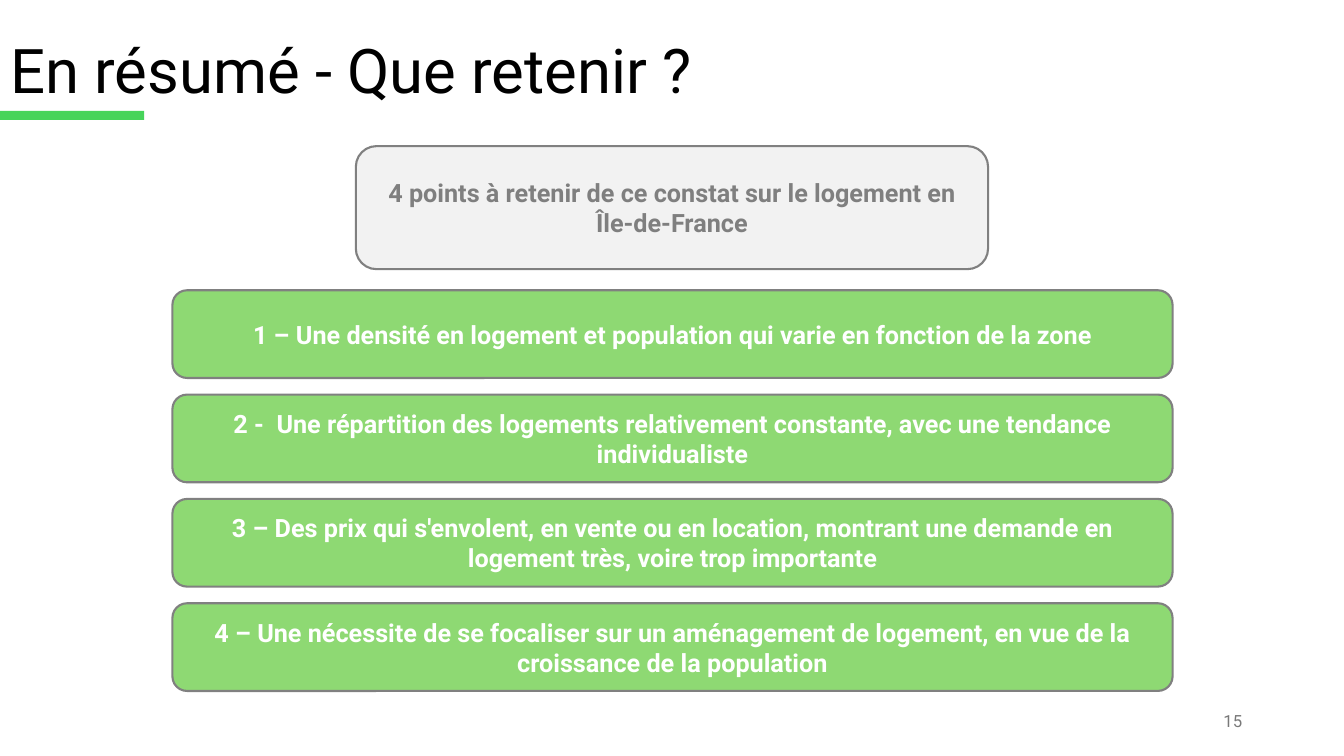
"""Build the summary slide on housing in Île-de-France."""
from dataclasses import dataclass

from pptx import Presentation
from pptx import util as u
from pptx.dml.color import RGBColor
from pptx.enum import shapes, text
from pptx.shapes.autoshape import Shape
from pptx.slide import Slide


@dataclass(frozen=True)
class Theme:
    """Hold the font, type sizes in points and colours."""
    font: str = "Roboto"
    title_size: int = 44
    body_size: int = 18
    number_size: int = 12
    title: str = "000000"
    accent: str = "47D45A"
    point_fill: str = "8ED973"
    point_text: str = "FFFFFF"
    intro_fill: str = "F2F2F2"
    intro_text: str = "7F7F7F"
    outline: str = "808080"
    number: str = "797979"


@dataclass(frozen=True)
class Card:
    """Describe a rounded box, in inches, and its text."""
    left: float
    top: float
    width: float
    height: float
    words: str
    fill: str
    color: str


THEME = Theme()
POINTS = (
    "1 – Une densité en logement et population qui varie en fonction de la zone",
    "2 -  Une répartition des logements relativement constante, avec une tendance individualiste",
    "3 – Des prix qui s'envolent, en vente ou en location, montrant une demande en logement très, "
    "voire trop importante",
    "4 – Une nécessite de se focaliser sur un aménagement de logement, en vue de la croissance "
    "de la population",
)
FIRST_POINT_TOP = 2.88
POINT_PITCH = 1.035


def write(shape: Shape, words: str, size: int, color: str,
          alignment: text.PP_ALIGN, bold: bool = False) -> None:
    """Set and format the single paragraph of a shape."""
    frame = shape.text_frame
    frame.text = words
    frame.word_wrap = True
    frame.auto_size = text.MSO_AUTO_SIZE.NONE
    frame.vertical_anchor = text.MSO_ANCHOR.MIDDLE
    paragraph = frame.paragraphs[0]
    paragraph.alignment = alignment
    font = paragraph.runs[0].font
    font.name = THEME.font
    font.size = u.Pt(size)
    font.bold = bold
    font.color.rgb = RGBColor.from_string(color)


def add_title(slide: Slide) -> None:
    """Place the title and its accent bar."""
    title = slide.shapes.title
    title.left, title.top = u.Inches(0), u.Inches(0)
    title.width, title.height = u.Inches(11.5), u.Inches(1.45)
    write(title, "En résumé - Que retenir ?", THEME.title_size, THEME.title, text.PP_ALIGN.LEFT)
    title.text_frame.paragraphs[0].line_spacing = 0.9
    bar = slide.shapes.add_shape(shapes.MSO_SHAPE.RECTANGLE, u.Inches(0), u.Inches(1.1),
                                 u.Inches(1.43), u.Inches(0.09))
    bar.shadow.inherit = False
    bar.fill.solid()
    bar.fill.fore_color.rgb = RGBColor.from_string(THEME.accent)
    bar.line.fill.background()


def add_card(slide: Slide, card: Card) -> None:
    """Draw one rounded box with centred bold text."""
    box = slide.shapes.add_shape(shapes.MSO_SHAPE.ROUNDED_RECTANGLE, u.Inches(card.left),
                                 u.Inches(card.top), u.Inches(card.width), u.Inches(card.height))
    box.shadow.inherit = False
    box.fill.solid()
    box.fill.fore_color.rgb = RGBColor.from_string(card.fill)
    box.line.color.rgb = RGBColor.from_string(THEME.outline)
    box.line.width = u.Pt(1.5)
    write(box, card.words, THEME.body_size, card.color, text.PP_ALIGN.CENTER, bold=True)


def add_number(slide: Slide) -> None:
    """Write the slide number."""
    number = slide.shapes.add_textbox(u.Inches(9.42), u.Inches(6.95), u.Inches(3), u.Inches(0.4))
    write(number, "15", THEME.number_size, THEME.number, text.PP_ALIGN.RIGHT)


def main() -> None:
    """Build and save the presentation."""
    presentation = Presentation()
    presentation.slide_width = u.Inches(13.33)
    presentation.slide_height = u.Inches(7.5)
    slide = presentation.slides.add_slide(presentation.slide_layouts[5])
    add_title(slide)
    add_number(slide)
    cards = [Card(1.71, FIRST_POINT_TOP + row * POINT_PITCH, 9.92, 0.87, words,
                  THEME.point_fill, THEME.point_text) for row, words in enumerate(POINTS)]
    cards.append(Card(3.53, 1.45, 6.27, 1.22,
                      "4 points à retenir de ce constat sur le logement en Île-de-France",
                      THEME.intro_fill, THEME.intro_text))
    for card in cards:
        add_card(slide, card)
    presentation.save("out.pptx")


if __name__ == "__main__":
    main()
